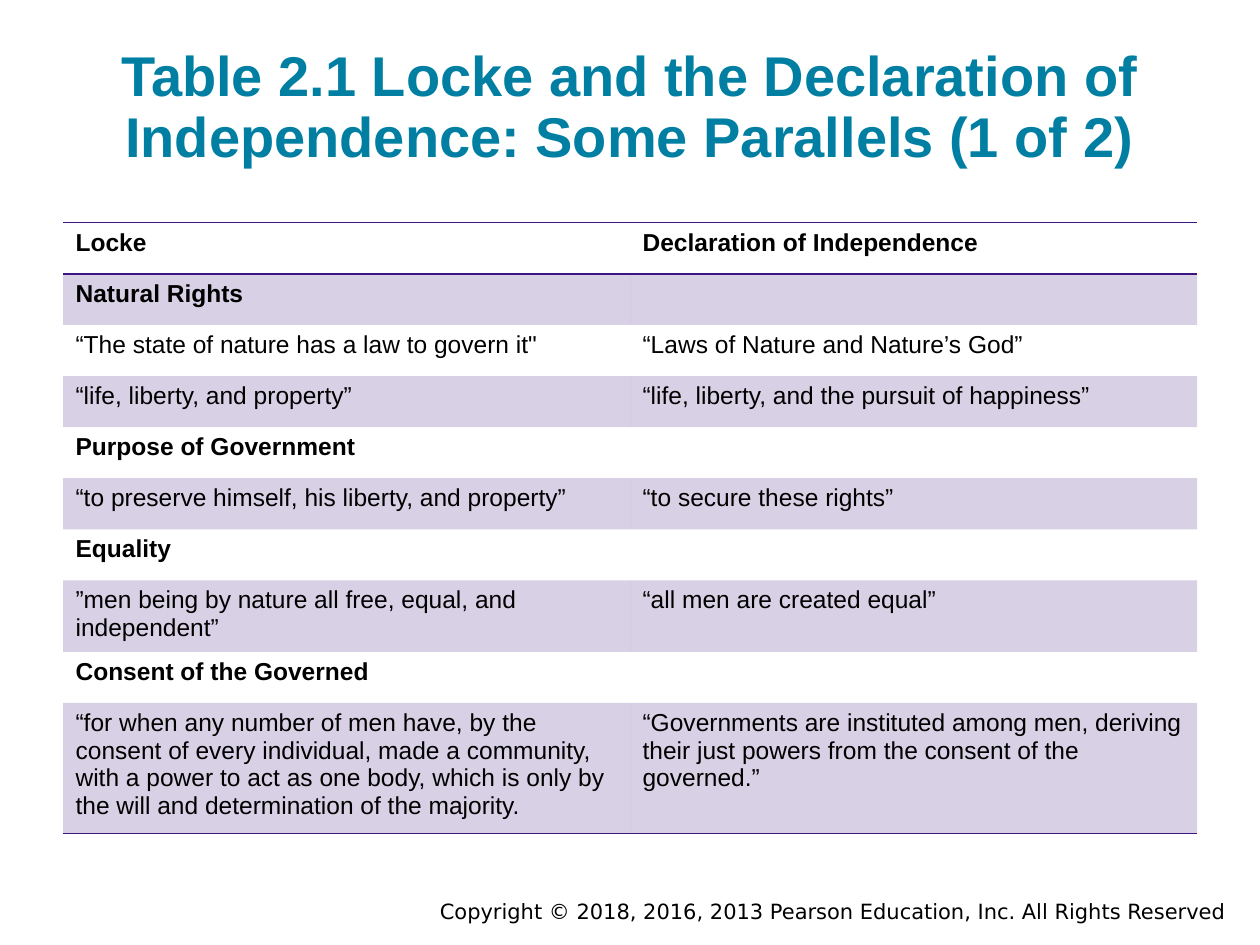
from lxml import etree
from pptx import Presentation
from pptx.dml.color import RGBColor
from pptx.enum.text import MSO_ANCHOR, PP_ALIGN
from pptx.oxml.ns import qn
from pptx.util import Cm, Pt

BOTTOM, TOP = MSO_ANCHOR.BOTTOM, MSO_ANCHOR.TOP
CENTER, RIGHT = PP_ALIGN.CENTER, PP_ALIGN.RIGHT
PURPLE, TEAL, BLACK = "3C1581", "007FA3", "000000"
NO_STYLE = "{2D5ABB26-0587-4C30-8999-92F81FD0307C}"


def add_run(p, text, size, color, bold=False, font="Arial"):
    r = p.add_run()
    r.text = text
    r.font.name, r.font.size, r.font.bold = font, Pt(size), bold
    r.font.color.rgb = RGBColor.from_string(color)


def add_border(cell, side):
    ln = etree.SubElement(cell._tc.get_or_add_tcPr(), qn(f"a:{side}"), w=str(Pt(1)))
    fill = etree.SubElement(ln, qn("a:solidFill"))
    etree.SubElement(fill, qn("a:srgbClr"), val=PURPLE)


prs = Presentation()
prs.slide_width, prs.slide_height = Cm(25.4), Cm(19.05)
s = prs.slides.add_slide(prs.slide_layouts[6])

# Copyright line
tf = s.shapes.add_textbox(Cm(5.08), Cm(17.98), Cm(19.89), Cm(0.76)).text_frame
tf.word_wrap = True
p = tf.paragraphs[0]
p.alignment = RIGHT
add_run(p, "Copyright © 2018, 2016, 2013 Pearson Education, Inc. All Rights Reserved",
        12, BLACK, font="DejaVu Sans")

# Title
tf = s.shapes.add_textbox(Cm(1.27), Cm(0.61), Cm(22.86), Cm(3.05)).text_frame
tf.word_wrap = True
tf.vertical_anchor = BOTTOM
tf.margin_top = tf.margin_bottom = Cm(0.25)
p = tf.paragraphs[0]
p.alignment = CENTER
p.line_spacing = 0.9
add_run(p, "Table 2.1 Locke and the Declaration of Independence: Some Parallels (1 of 2)",
        32, TEAL, bold=True)

# Table contents: a row with an empty right cell is a section heading
rows = [
    ("Locke", "Declaration of Independence"),
    ("Natural Rights", ""),
    ("“The state of nature has a law to govern it\"", "“Laws of Nature and Nature’s God”"),
    ("“life, liberty, and property”", "“life, liberty, and the pursuit of happiness”"),
    ("Purpose of Government", ""),
    ("“to preserve himself, his liberty, and property”", "“to secure these rights”"),
    ("Equality", ""),
    ("”men being by nature all free, equal, and independent”", "“all men are created equal”"),
    ("Consent of the Governed", ""),
    ("“for when any number of men have, by the consent of every individual, made a community, "
     "with a power to act as one body, which is only by the will and determination of the majority.",
     "“Governments are instituted among men, deriving their just powers from the consent of the "
     "governed.”"),
]

row_height = Cm(1.03)
tbl = s.shapes.add_table(len(rows), 2, Cm(1.27), Cm(4.49), Cm(22.86),
                         row_height * len(rows)).table
tbl._tbl.tblPr.find(qn("a:tableStyleId")).text = NO_STYLE

for i, texts in enumerate(rows):
    tbl.rows[i].height = row_height
    bold = i == 0 or not texts[1]
    for j, text in enumerate(texts):
        cell = tbl.cell(i, j)
        cell.vertical_anchor = TOP
        if text:
            add_run(cell.text_frame.paragraphs[0], text, 14, BLACK, bold)
        # Rules around the header and under the last row
        if i == 0:
            add_border(cell, "lnT")
        if i in (0, len(rows) - 1):
            add_border(cell, "lnB")
        # Every second row is tinted
        if i % 2:
            cell.fill.solid()
            cell.fill.fore_color.rgb = RGBColor.from_string(PURPLE)
            clr = cell._tc.tcPr.find(qn("a:solidFill")).find(qn("a:srgbClr"))
            etree.SubElement(clr, qn("a:alpha"), val="20000")
        else:
            cell.fill.background()

prs.save("out.pptx")
